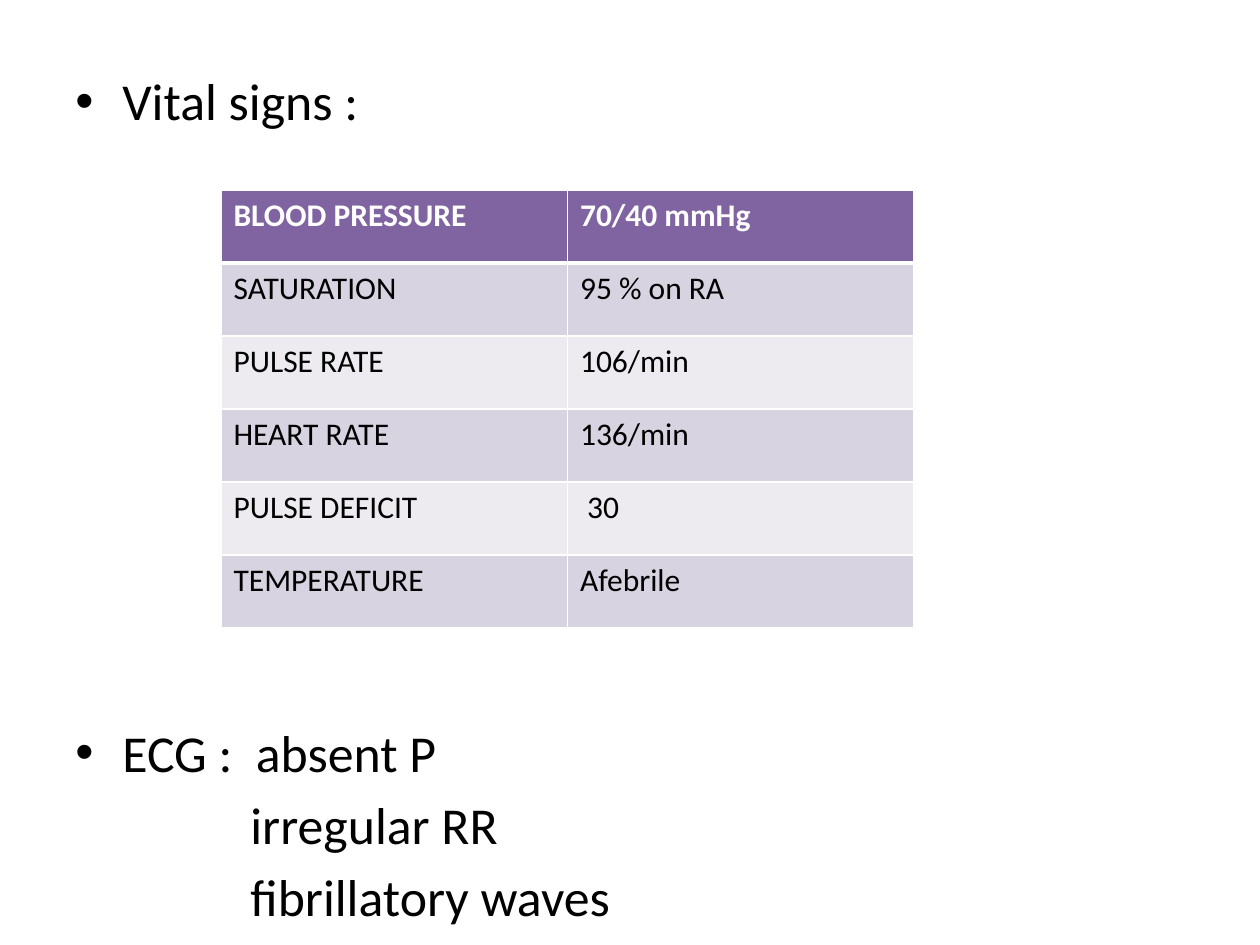
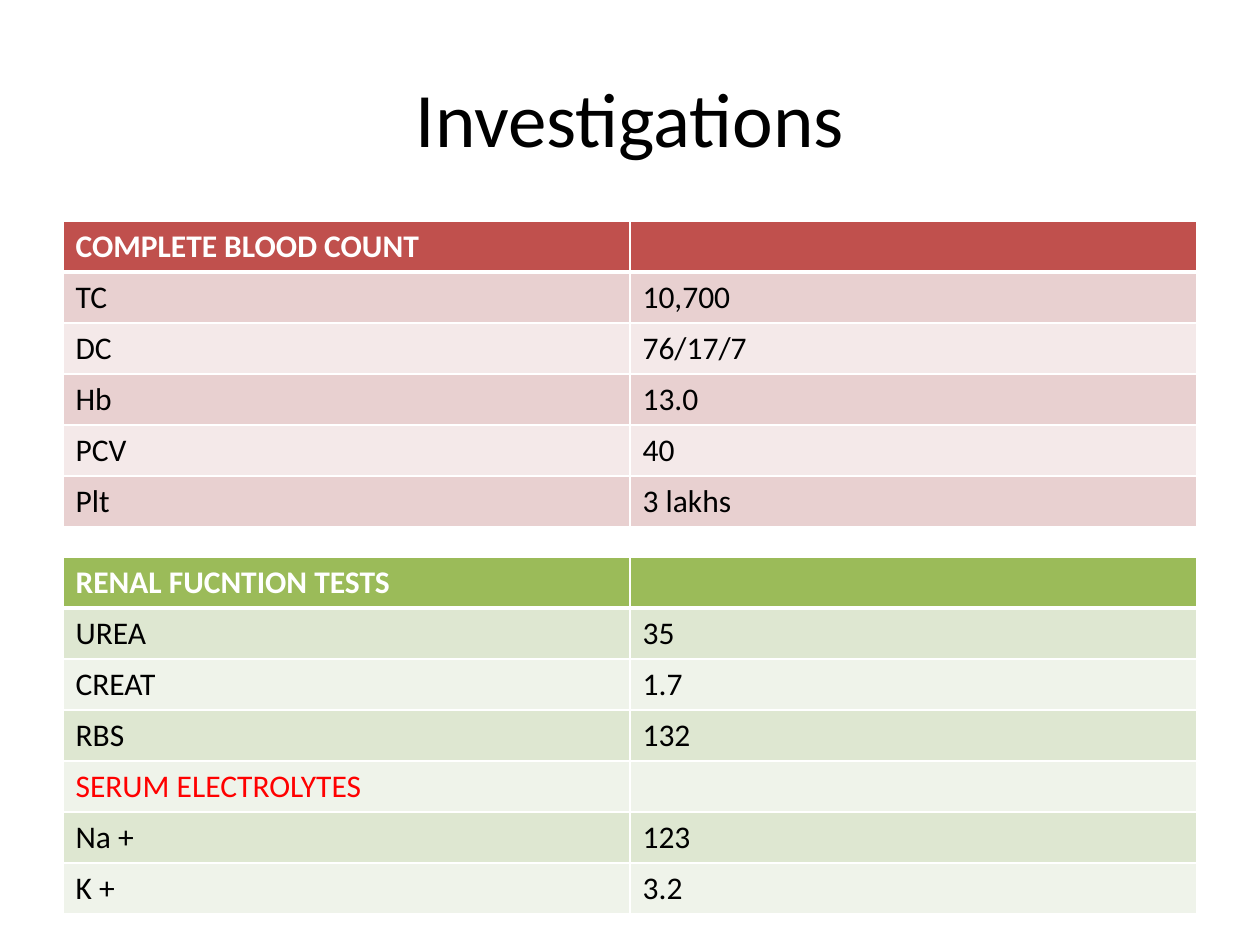
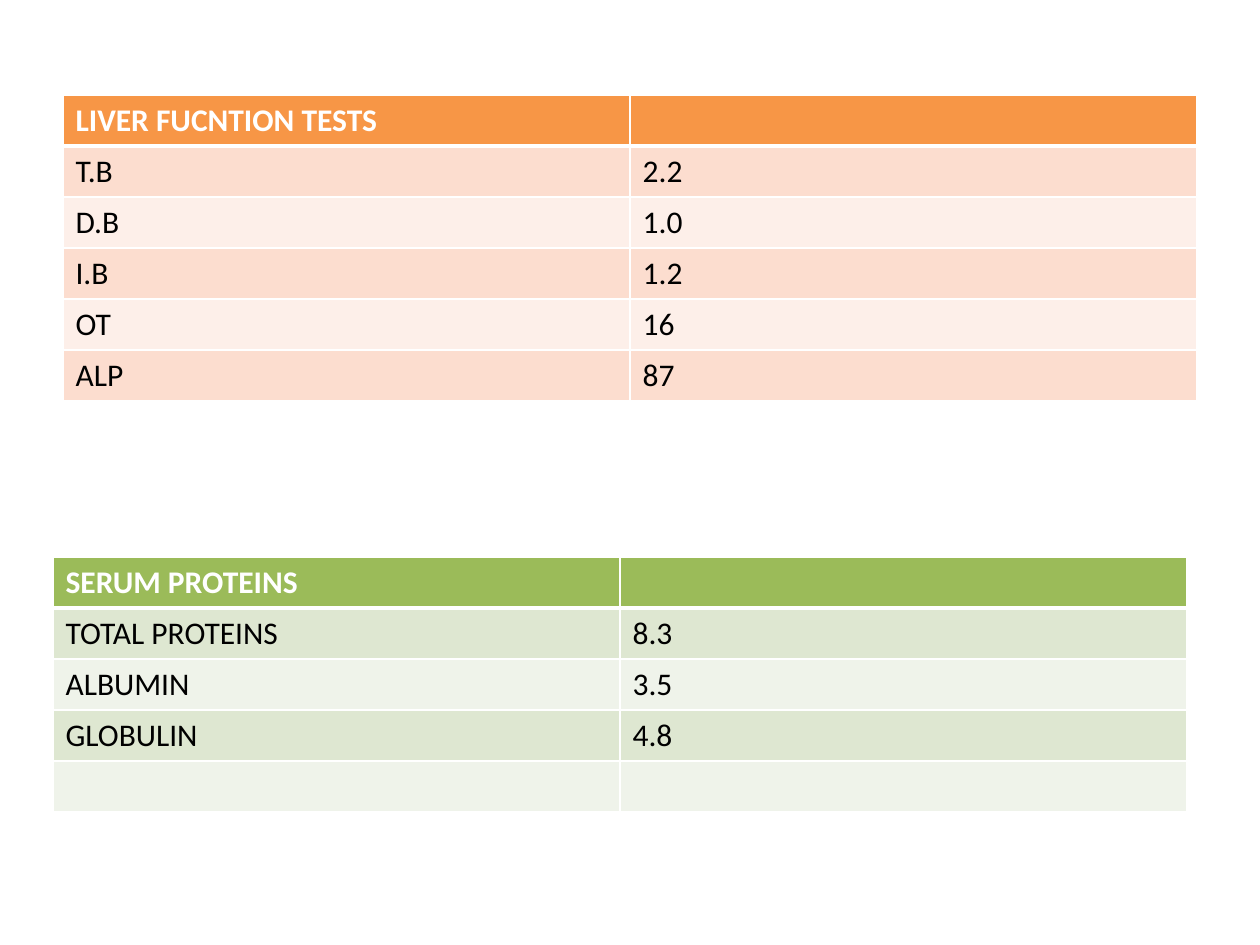
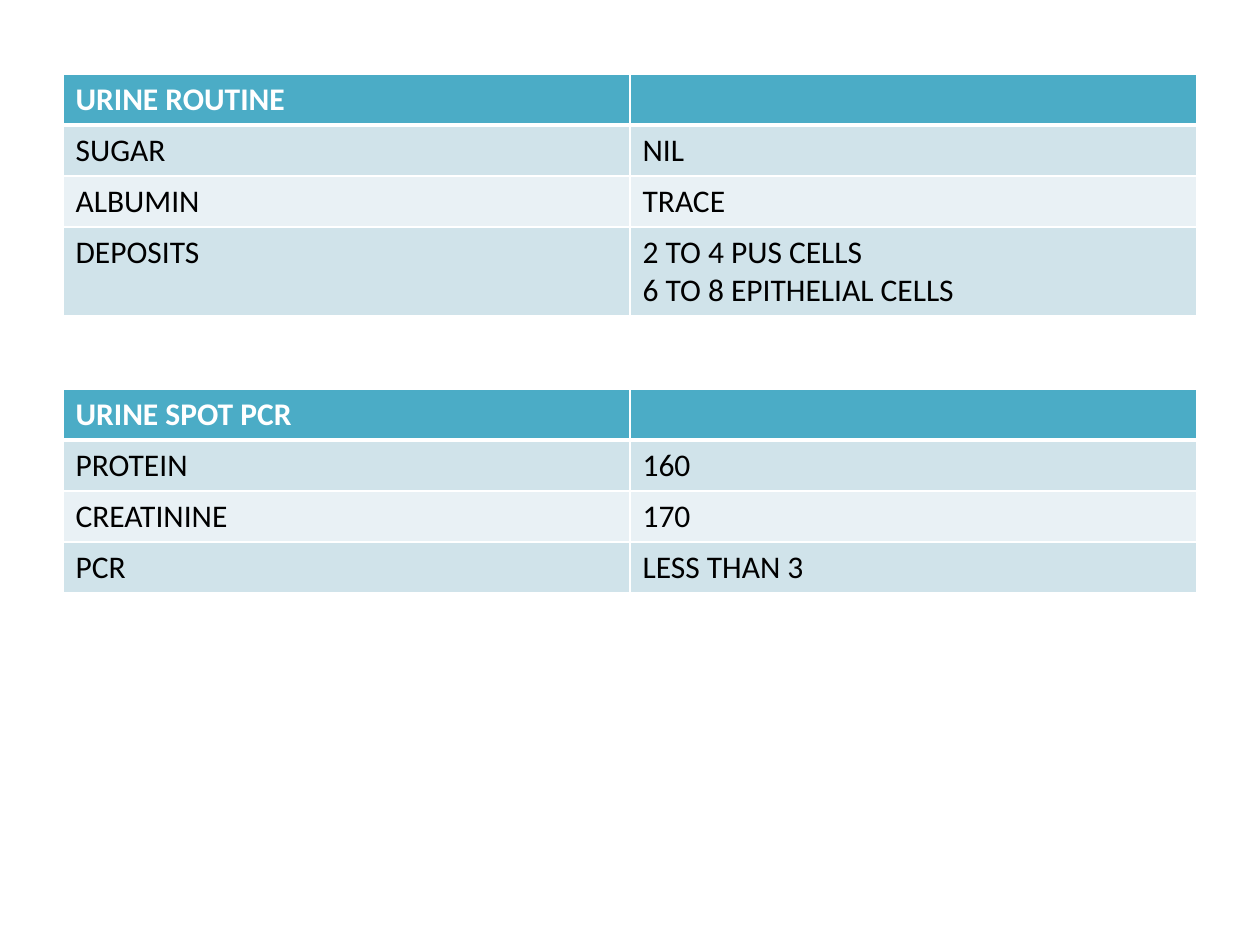
from dataclasses import dataclass

from lxml import etree
from pptx import Presentation
from pptx import util as u
from pptx.dml.color import RGBColor
from pptx.enum import text
from pptx.oxml import ns


@dataclass(frozen=True)
class Theme:
    font: str = "Calibri"
    dark: str = "000000"
    light: str = "FFFFFF"
    alert: str = "FF0000"
    title_size: float = 44
    body_size: float = 29.6
    cell_size: float = 18
    rule: float = 1
    header_rule: float = 3


THEME = Theme()

BANDS = {
    "purple": ("8064A2", "D8D3E0", "EDEAF0"),
    "red": ("C0504D", "E8D0D0", "F4E9E9"),
    "green": ("9BBB59", "DEE7D1", "EFF3EA"),
    "orange": ("F79646", "FCDDCF", "FDEFE9"),
    "teal": ("4BACC6", "D0E3EA", "E9F1F5"),
}
ALERTS = {"SERUM ELECTROLYTES"}

VITALS = [
    ("BLOOD PRESSURE", "70/40 mmHg"),
    ("SATURATION", "95 % on RA"),
    ("PULSE RATE", "106/min"),
    ("HEART RATE", "136/min"),
    ("PULSE DEFICIT", " 30"),
    ("TEMPERATURE", "Afebrile"),
]
BLOOD_COUNT = [
    ("COMPLETE BLOOD COUNT", ""),
    ("TC", "10,700"),
    ("DC", "76/17/7"),
    ("Hb", "13.0"),
    ("PCV", "40"),
    ("Plt", "3 lakhs"),
]
RENAL = [
    ("RENAL FUCNTION TESTS", ""),
    ("UREA", "35"),
    ("CREAT", "1.7"),
    ("RBS", "132"),
    ("SERUM ELECTROLYTES", ""),
    ("Na +", "123"),
    ("K +", "3.2"),
]
LIVER = [
    ("LIVER FUCNTION TESTS", ""),
    ("T.B", "2.2"),
    ("D.B", "1.0"),
    ("I.B", "1.2"),
    ("OT", "16"),
    ("ALP", "87"),
]
PROTEINS = [
    ("SERUM PROTEINS", ""),
    ("TOTAL PROTEINS", "8.3"),
    ("ALBUMIN", "3.5"),
    ("GLOBULIN", "4.8"),
    ("", ""),
]
URINE = [
    ("URINE ROUTINE", ""),
    ("SUGAR", "NIL"),
    ("ALBUMIN", "TRACE"),
    ("DEPOSITS", "2 TO 4 PUS CELLS\n6 TO 8 EPITHELIAL CELLS"),
]
SPOT_PCR = [
    ("URINE SPOT PCR", ""),
    ("PROTEIN", "160"),
    ("CREATININE", "170"),
    ("PCR", "LESS THAN 3"),
]

LINE_GAP, TABLE_GAP = 5.7, 336.5
FINDINGS = [
    ("Vital signs :", True, 0),
    ("ECG :  absent P", True, TABLE_GAP),
    ("irregular RR", False, LINE_GAP),
    ("fibrillatory waves", False, LINE_GAP),
]

LEFT, WIDTH, ROW, EXTRA_LINE = 63, 1134, 51, 37
TITLE_BOX = (LEFT, 38, WIDTH, 158)
BODY_BOX = (LEFT, 63, WIDTH, 851)
HANGING, CONTINUATION = 47, 175

SLIDES = [
    {"findings": FINDINGS, "tables": [(VITALS, "purple", 221, 190, 693, 73)]},
    {"title": "Investigations", "tables": [
        (BLOOD_COUNT, "red", LEFT, 221, WIDTH, ROW),
        (RENAL, "green", LEFT, 557, WIDTH, ROW),
    ]},
    {"tables": [
        (LIVER, "orange", LEFT, 95, WIDTH, ROW),
        (PROTEINS, "green", 53, 557, WIDTH, ROW),
    ]},
    {"tables": [
        (URINE, "teal", LEFT, 74, WIDTH, ROW),
        (SPOT_PCR, "teal", LEFT, 389, WIDTH, ROW),
    ]},
]


def px(length):
    return u.Emu(round(length * u.Inches(1) / 126))


def write(paragraph, words, size, color, bold=False):
    run = paragraph.add_run()
    run.text = words
    values = {"name": THEME.font, "size": u.Pt(size), "bold": bold}
    for name, value in values.items():
        setattr(run.font, name, value)
    run.font.color.rgb = RGBColor.from_string(color)


def add_box(slide, box, anchor):
    frame = slide.shapes.add_textbox(*map(px, box)).text_frame
    frame.word_wrap = True
    frame.vertical_anchor = anchor
    return frame


def add_title(slide, words):
    paragraph = add_box(slide, TITLE_BOX, text.MSO_ANCHOR.MIDDLE).paragraphs[0]
    paragraph.alignment = text.PP_ALIGN.CENTER
    write(paragraph, words, THEME.title_size, THEME.dark)


def add_findings(slide, findings):
    frame = add_box(slide, BODY_BOX, text.MSO_ANCHOR.TOP)
    for index, (words, bulleted, gap) in enumerate(findings):
        paragraph = frame.add_paragraph() if index else frame.paragraphs[0]
        paragraph.space_before = u.Pt(gap)
        properties = paragraph._p.get_or_add_pPr()
        properties.set("marL", str(px(HANGING if bulleted else CONTINUATION)))
        properties.set("indent", str(px(-HANGING if bulleted else 0)))
        if bulleted:
            etree.SubElement(properties, ns.qn("a:buFont"), typeface="Arial")
            etree.SubElement(properties, ns.qn("a:buChar"), char="•")
        write(paragraph, words, THEME.body_size, THEME.dark)


def set_borders(cell, top, bottom):
    properties = cell._tc.get_or_add_tcPr()
    widths = {"lnL": THEME.rule, "lnR": THEME.rule, "lnT": top, "lnB": bottom}
    for index, (side, width) in enumerate(widths.items()):
        line = etree.Element(ns.qn(f"a:{side}"), w=str(u.Pt(width)))
        fill = etree.SubElement(line, ns.qn("a:solidFill"))
        etree.SubElement(fill, ns.qn("a:srgbClr"), val=THEME.light)
        properties.insert(index, line)


def fill_cell(cell, words, row, bands):
    header = row == 0
    cell.fill.solid()
    band = bands[0] if header else bands[2 - row % 2]
    cell.fill.fore_color.rgb = RGBColor.from_string(band)
    set_borders(
        cell,
        THEME.header_rule if row == 1 else THEME.rule,
        THEME.header_rule if header else THEME.rule,
    )
    color = THEME.light if header else THEME.alert if words in ALERTS else THEME.dark
    for index, line in enumerate(words.splitlines()):
        frame = cell.text_frame
        paragraph = frame.add_paragraph() if index else frame.paragraphs[0]
        write(paragraph, line, THEME.cell_size, color, header)


def add_results(slide, rows, band, left, top, width, row_height):
    heights = [row_height + EXTRA_LINE * value.count("\n") for _, value in rows]
    box = map(px, (left, top, width, sum(heights)))
    table = slide.shapes.add_table(len(rows), len(rows[0]), *box).table
    for row, (values, height) in enumerate(zip(rows, heights)):
        table.rows[row].height = px(height)
        for column, words in enumerate(values):
            fill_cell(table.cell(row, column), words, row, BANDS[band])


def main():
    presentation = Presentation()
    presentation.slide_width, presentation.slide_height = px(1260), px(945)
    for content in SLIDES:
        slide = presentation.slides.add_slide(presentation.slide_layouts[6])
        if "title" in content:
            add_title(slide, content["title"])
        if "findings" in content:
            add_findings(slide, content["findings"])
        for results in content["tables"]:
            add_results(slide, *results)
    presentation.save("out.pptx")


if __name__ == "__main__":
    main()
